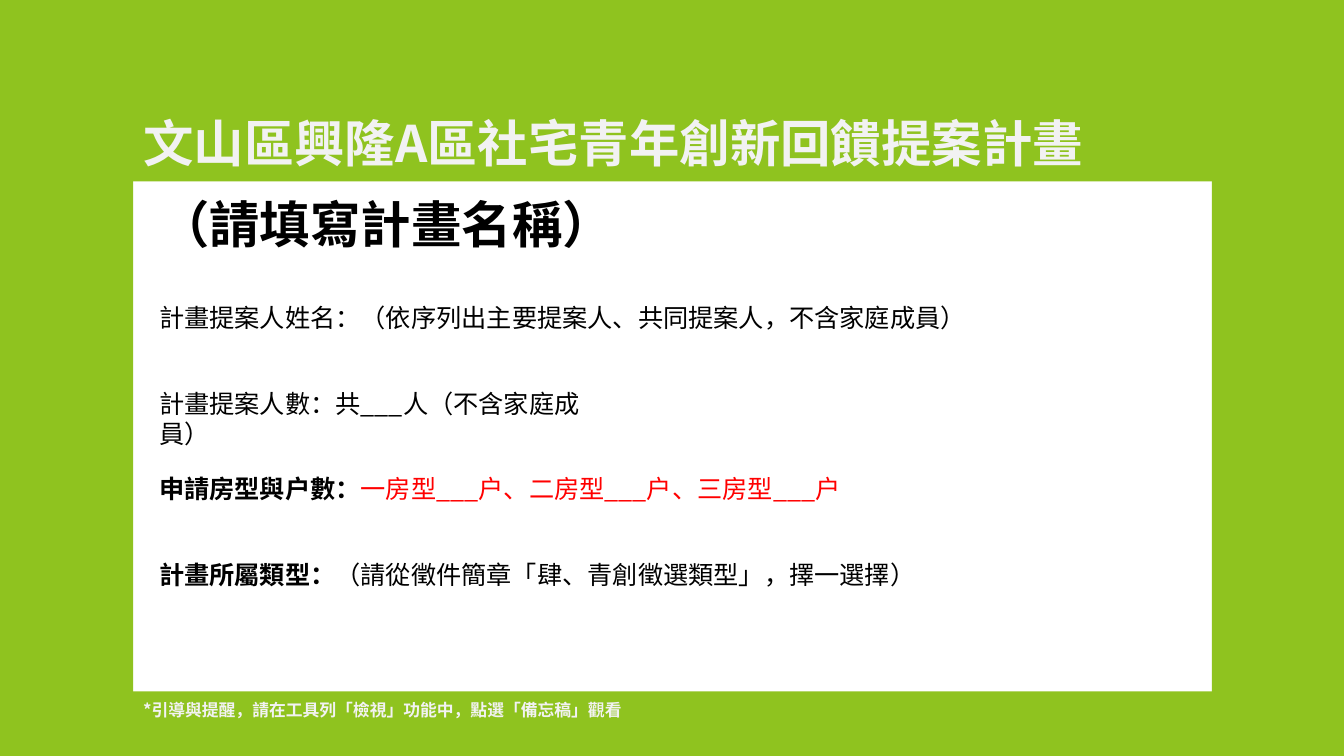
import pptx
import pptx.dml.color
import pptx.enum.shapes
import pptx.enum.text
import pptx.oxml.ns
import pptx.util
from lxml import etree

Inches = pptx.util.Inches
COLORS = {"green": "8FC31F", "light": "F2F2F2", "black": "000000", "red": "FF0000"}
WIDTH, HEIGHT = 13.33, 7.5


class CoverSlide:
    """Holds the text style and the current slide."""

    font = "Noto Sans CJK TC"

    def __init__(self, deck):
        self.slide = deck.slides.add_slide(deck.slide_layouts[5])

    def color(self, name):
        return pptx.dml.color.RGBColor.from_string(COLORS[name])

    def frame(self, bands):
        group = self.slide.shapes.add_group_shape()
        for band in bands:
            shape = group.shapes.add_shape(
                pptx.enum.shapes.MSO_SHAPE.RECTANGLE, *map(Inches, band))
            shape.shadow.inherit = False
            shape.fill.solid()
            shape.fill.fore_color.rgb = self.color("green")
            shape.line.fill.background()

    def fill_text(self, box, size, parts):
        """Fill a box with one paragraph of (text, color, bold) parts."""
        text_frame = box.text_frame
        text_frame.word_wrap = True
        text_frame.auto_size = pptx.enum.text.MSO_AUTO_SIZE.SHAPE_TO_FIT_TEXT
        text_frame.vertical_anchor = pptx.enum.text.MSO_ANCHOR.TOP
        para = text_frame.paragraphs[0]
        para.alignment = pptx.enum.text.PP_ALIGN.LEFT
        for text, color, bold in parts:
            span = para.add_run()
            span.text = text
            span.font.size = pptx.util.Pt(size)
            span.font.bold = bold
            span.font.color.rgb = self.color(color)
            span.font.name = self.font
            # East Asian characters take their own typeface entry
            east_asian = etree.SubElement(
                span.font._element, pptx.oxml.ns.qn("a:ea"))
            east_asian.set("typeface", self.font)

    def title(self, place, size, parts):
        box = self.slide.shapes.title
        box.left, box.top, box.width, box.height = map(Inches, place)
        self.fill_text(box, size, parts)
        # Bring the title in front of the frame
        self.slide.shapes._spTree.append(box._element)

    def text(self, place, size, parts):
        box = self.slide.shapes.add_textbox(*map(Inches, place))
        self.fill_text(box, size, parts)


def main():
    deck = pptx.Presentation()
    deck.slide_width, deck.slide_height = Inches(WIDTH), Inches(HEIGHT)
    page = CoverSlide(deck)

    # Green frame around the white form
    side, side_top, bottom_top = 1.32, 0.65, 6.86
    page.frame([
        (0, 0, WIDTH, 1.8),
        (0, side_top, side, HEIGHT - side_top),
        (0, bottom_top, WIDTH, HEIGHT - bottom_top),
        (12.02, side_top, side, HEIGHT - side_top),
    ])

    # Headings
    page.title((side, 1.06, 10.61, 0.71), 36,
               [("文山區興隆A區社宅青年創新回饋提案計畫", "light", True)])
    form_left = 1.48
    page.text((form_left, 1.87, 10.38, 0.71), 36,
              [("（請填寫計畫名稱）", "black", True)])

    # Form fields at an equal pitch: width, then text parts
    fields = [
        (8.28, [("計畫提案人姓名：（依序列出主要提案人、共同提案人，不含家庭成員）",
                 "black", False)]),
        (4.84, [("計畫提案人數：共___人（不含家庭成員）", "black", False)]),
        (10.38, [("申請房型與戶數：", "black", True),
                 ("一房型___戶、二房型___戶、三房型___戶", "red", False)]),
        (10.54, [("計畫所屬類型：", "black", True),
                 ("（請從徵件簡章「肆、青創徵選類型」，擇一選擇）", "black", False)]),
    ]
    first_top, pitch = 2.95, 0.85
    for index, (width, parts) in enumerate(fields):
        page.text((form_left, first_top + index * pitch, width, 0.4), 18, parts)

    # Reminder in the bottom band
    page.text((side, 6.89, 4.99, 0.3), 12,
              [("*引導與提醒，請在工具列「檢視」功能中，點選「備忘稿」觀看", "light", True)])

    deck.save("out.pptx")


if __name__ == "__main__":
    main()
